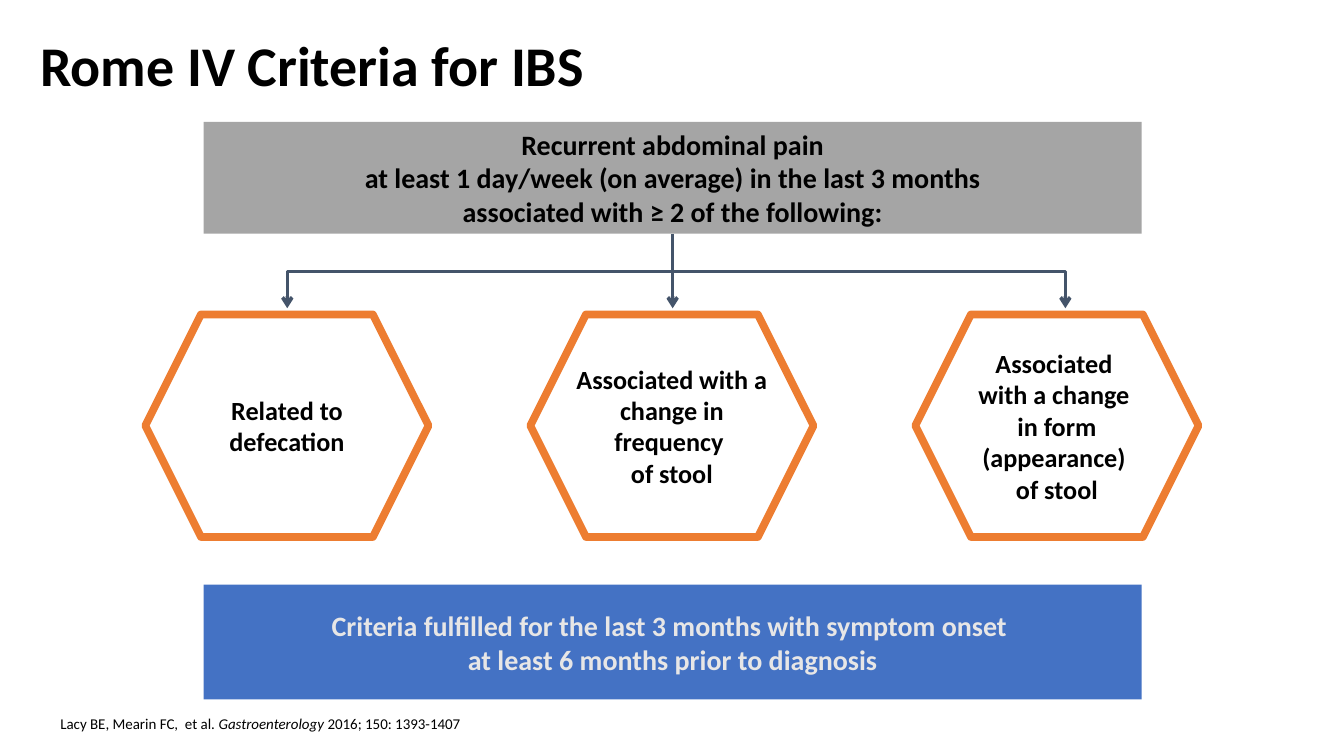
from lxml.etree import SubElement
from pptx import Presentation
from pptx.dml.color import RGBColor
from pptx.enum.shapes import MSO_CONNECTOR, MSO_SHAPE
from pptx.enum.text import MSO_ANCHOR as ANCHOR, MSO_AUTO_SIZE, PP_ALIGN as ALIGN
from pptx.oxml.ns import qn
from pptx.util import Pt

COLORS = {"text": "000000", "pale": "E7E6E6", "gray": "A5A5A5",
          "blue": "4472C4", "orange": "ED7D31", "slate": "44546A"}
CRITERIA = ["Related to defecation",
            "Associated with a change in frequency \nof stool",
            "Associated \nwith a change \nin form (appearance) \nof stool"]


def rgb(name):
    """Return the named colour."""
    return RGBColor.from_string(COLORS[name])


def set_font(p, size, color="text", bold=True):
    """Format a whole paragraph."""
    p.font.name, p.font.size, p.font.bold = "Calibri", Pt(size), bold
    p.font.color.rgb = rgb(color)


def add_block(s, kind, box, lines, size, color="text", side=7.2):
    """Add an unfilled, unlined shape with centred text."""
    sp = s.shapes.add_shape(kind, *map(Pt, box))
    sp.shadow.inherit = False
    sp.fill.background()
    sp.line.fill.background()
    tf = sp.text_frame
    tf.word_wrap, tf.vertical_anchor = True, ANCHOR.MIDDLE
    tf.margin_left = tf.margin_right = Pt(side)
    for i, line in enumerate(lines):
        p = tf.add_paragraph() if i else tf.paragraphs[0]
        p.text, p.alignment = line, ALIGN.CENTER
        set_font(p, size, color)
    return sp


def add_banner(s, box, lines, fill, color="text"):
    """Add a filled full-width banner."""
    sp = add_block(s, MSO_SHAPE.RECTANGLE, box, lines, 20, color)
    sp.fill.solid()
    sp.fill.fore_color.rgb = rgb(fill)
    return sp


def add_criteria(s, x, y, w, h, pitch):
    """Add the row of criterion hexagons."""
    for i, text in enumerate(CRITERIA):
        sp = add_block(s, MSO_SHAPE.HEXAGON, (x + i * pitch, y, w, h), [text], 18.7, side=0)
        sp.line.color.rgb, sp.line.width = rgb("orange"), Pt(5.5)


def style_arrow(sp, *ends):
    """Draw a slate line with open arrowheads at the given ends."""
    sp.line.color.rgb, sp.line.width = rgb("slate"), Pt(2.5)
    for end in ends:
        SubElement(sp.line._get_or_add_ln(), qn(f"a:{end}"), type="arrow")


def add_arrows(s, banner, x, y, w, h):
    """Add the bracket in its box and the middle arrow from the banner."""
    middle = banner.left + banner.width // 2
    arrow = s.shapes.add_connector(MSO_CONNECTOR.STRAIGHT, middle,
                                   banner.top + banner.height, middle, Pt(y + h))
    arrow.begin_connect(banner, 2)
    style_arrow(arrow, "tailEnd")
    SubElement(arrow._element.spPr, qn("a:effectLst"))
    outline = s.shapes.build_freeform(Pt(x), Pt(y + h))
    outline.add_line_segments([(Pt(x), Pt(y)), (Pt(x + w), Pt(y)),
                               (Pt(x + w), Pt(y + h))], close=False)
    bracket = outline.convert_to_shape()
    bracket.shadow.inherit = False
    bracket.fill.background()
    style_arrow(bracket, "headEnd", "tailEnd")


def add_title(s, x, y, w, h):
    """Place and format the slide title."""
    sp = s.shapes.title
    sp.left, sp.top, sp.width, sp.height = map(Pt, (x, y, w, h))
    tf = sp.text_frame
    tf.text = "Rome IV Criteria for IBS"
    tf.auto_size, tf.vertical_anchor = MSO_AUTO_SIZE.NONE, ANCHOR.MIDDLE
    p = tf.paragraphs[0]
    p.alignment, p.line_spacing = ALIGN.LEFT, 0.9
    set_font(p, 40)


def add_citation(s, x, y, w, h):
    """Add the source reference."""
    tf = s.shapes.add_textbox(*map(Pt, (x, y, w, h))).text_frame
    tf.word_wrap, tf.vertical_anchor, tf.margin_bottom = True, ANCHOR.BOTTOM, 0
    p = tf.paragraphs[0]
    p.line_spacing = 0.9
    set_font(p, 10.7, bold=False)
    for text, italic in [("Lacy BE, Mearin FC,  et al. ", False), ("Gastroenterology", True),
                         (" 2016; 150: 1393-1407", False)]:
        r = p.add_run()
        r.text, r.font.italic = text, italic


def build_criteria_slide(prs):
    """Build the diagnostic criteria slide."""
    s = prs.slides.add_slide(prs.slide_layouts[5])
    add_title(s, 21.6, 13.7, 779, 70.5)
    add_citation(s, 36, 494.6, 847.5, 28.8)
    banner = add_banner(s, (145.5, 87, 670, 80),
                        ["Recurrent abdominal pain",
                         "at least 1 day/week (on average) in the last 3 months",
                         "associated with ≥ 2 of the following:"], "gray")
    add_criteria(s, 103.8, 224.6, 202.3, 159, 275)
    add_arrows(s, banner, 205.2, 193.9, 555.8, 26.3)
    add_banner(s, (145.5, 417.6, 670, 82),
               ["Criteria fulfilled for the last 3 months with symptom onset \n"
                "at least 6 months prior to diagnosis"], "blue", "pale")


def main():
    """Create and save the presentation."""
    prs = Presentation()
    prs.slide_width, prs.slide_height = Pt(960), Pt(540)
    build_criteria_slide(prs)
    prs.save("out.pptx")


if __name__ == "__main__":
    main()
